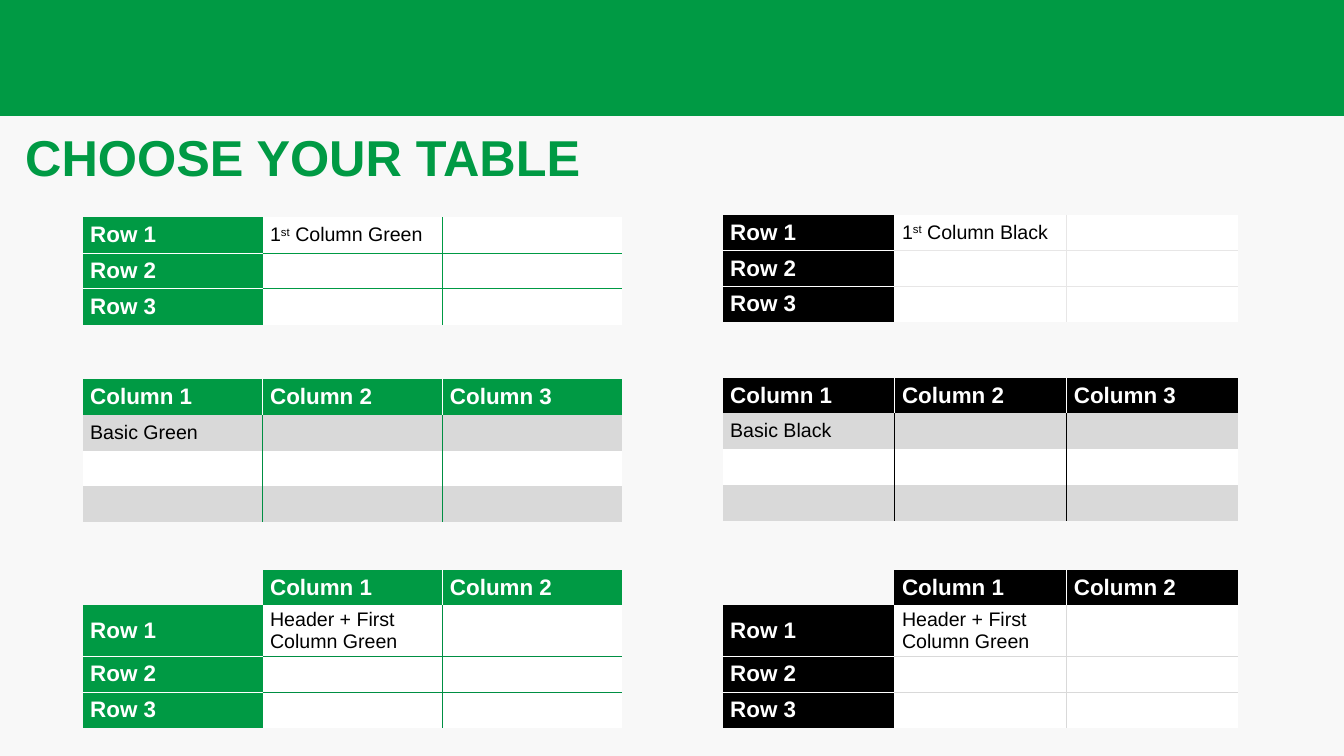
import dataclasses

import lxml.etree
import pptx
import pptx.dml.color
import pptx.enum.shapes
import pptx.enum.text
import pptx.oxml.ns
import pptx.util

PX = 9144  # 100 px to the inch
GREEN, DEEP, BLACK, WHITE = "009A44", "008F43", "000000", "FFFFFF"
PALE, GRAY = "E7E6E6", "D9D9D9"
NO_STYLE = "{2D5ABB26-0587-4C30-8999-92F81FD0307C}"
ROW, TALL = 71, 95
FIRST = [["Row 1"], ["Row 2"], ["Row 3"]]
HEADS = ["Column 1", "Column 2", "Column 3"]


@dataclasses.dataclass
class Grid:
    left: int
    top: int
    col: int
    head: str
    line: str
    rows: list[list[str]]
    top_head: bool = False
    side_head: bool = False
    note: str = ""  # text of the first body cell
    high: tuple[int, ...] = (ROW,) * 4

    @property
    def bands(self) -> bool:
        return self.top_head and not self.side_head

    def kind(self, row: int, col: int) -> str:
        top = self.top_head and row == 0
        side = self.side_head and col == 0
        if top and side:
            return "blank"
        return "head" if top or side else "body"


def px(size: int) -> int:
    return pptx.util.Emu(size * PX)


def color(code: str) -> pptx.dml.color.RGBColor:
    return pptx.dml.color.RGBColor.from_string(code)


def paint(fill, code: str) -> None:
    fill.solid()
    fill.fore_color.rgb = color(code)


def style(font, size: int, code: str, bold: bool) -> None:
    font.name = "Arial"
    font.size = pptx.util.Pt(size)
    font.bold = bold
    font.color.rgb = color(code)


def border(cell, side: str, code: str) -> None:
    """Draw one edge (L, R, T or B); call before the cell is filled."""
    qn = pptx.oxml.ns.qn
    edge = lxml.etree.SubElement(cell._tc.get_or_add_tcPr(), qn(f"a:ln{side}"), w="12700")
    fill = lxml.etree.SubElement(edge, qn("a:solidFill"))
    lxml.etree.SubElement(fill, qn("a:srgbClr"), val=code)


def edges(cell, grid: Grid, row: int, col: int) -> None:
    """Rule inner edges: white between headers, line colour in the body."""
    kind = grid.kind(row, col)
    near = {"L": (row, col - 1), "R": (row, col + 1),
            "T": (row - 1, col), "B": (row + 1, col)}
    for side, (r, c) in near.items():
        inside = 0 <= r < len(grid.rows) and 0 <= c < 3
        flat = grid.bands and side in "TB"
        if inside and not flat and kind == grid.kind(r, c):
            border(cell, side, WHITE if kind == "head" else grid.line)


def write(cell, text: str, head: bool) -> None:
    cell.vertical_anchor = pptx.enum.text.MSO_ANCHOR.MIDDLE
    cell.margin_left = cell.margin_right = px(15)
    cell.margin_top = cell.margin_bottom = px(7)
    para = cell.text_frame.paragraphs[0]
    if text.startswith("1st"):
        for part in ("1", "st", text[3:]):
            para.add_run().text = part
        para.runs[1].font._element.set("baseline", "30000")
    else:
        para.text = text
    for run in para.runs:
        style(run.font, 32 if head else 28, WHITE if head else BLACK, head)


def draw(slide, grid: Grid) -> None:
    count = len(grid.rows)
    high = grid.high[:count]
    frame = slide.shapes.add_table(count, 3, px(grid.left), px(grid.top),
                                   px(grid.col * 3), px(sum(high)))
    table = frame.table
    table.first_row = table.horz_banding = False
    table._tbl.tblPr.find(pptx.oxml.ns.qn("a:tableStyleId")).text = NO_STYLE
    for col in table.columns:
        col.width = px(grid.col)
    spot = (int(grid.top_head), int(grid.side_head))
    for r, texts in enumerate(grid.rows):
        table.rows[r].height = px(high[r])
        for c in range(3):
            cell, kind = table.cell(r, c), grid.kind(r, c)
            text = texts[c] if c < len(texts) else ""
            write(cell, grid.note if (r, c) == spot else text, kind == "head")
            edges(cell, grid, r, c)
            if kind == "blank":
                cell.fill.background()
            elif kind == "head":
                paint(cell.fill, grid.head)
            else:
                paint(cell.fill, GRAY if grid.bands and r % 2 else WHITE)


def banner(slide, width: int) -> None:
    bar = slide.shapes.add_shape(pptx.enum.shapes.MSO_SHAPE.RECTANGLE,
                                 0, 0, px(width), px(230))
    bar.shadow.inherit = False
    paint(bar.fill, GREEN)
    bar.line.fill.background()


def head_line(slide, text: str) -> None:
    title = slide.shapes.title
    title.left, title.top, title.width, title.height = map(px, (50, 259, 2567, 119))
    frame = title.text_frame
    frame.text = text
    frame.auto_size = pptx.enum.text.MSO_AUTO_SIZE.NONE
    frame.vertical_anchor = pptx.enum.text.MSO_ANCHOR.MIDDLE
    frame.margin_left = frame.margin_right = 0
    para = frame.paragraphs[0]
    para.alignment = pptx.enum.text.PP_ALIGN.LEFT
    para.line_spacing = 0.9
    style(para.runs[0].font, 72, GREEN, True)


def main() -> None:
    deck = pptx.Presentation()
    deck.slide_width, deck.slide_height = px(2667), px(1500)
    slide = deck.slides.add_slide(deck.slide_layouts[5])
    paint(slide.background.fill, "F8F8F8")
    banner(slide, 2667)
    head_line(slide, "CHOOSE YOUR TABLE")

    basic = [HEADS, [], [], []]
    both = [["", *HEADS[:2]], *FIRST]
    steps = (ROW, TALL, ROW, ROW)
    mixed = "Header + First Column Green"
    green, black = (357, GREEN), (341, BLACK)
    grids = [
        Grid(164, 431, *green, GREEN, FIRST, side_head=True, note="1st Column Green"),
        Grid(1434, 426, *black, PALE, FIRST, side_head=True, note="1st Column Black"),
        Grid(164, 752, *green, DEEP, basic, top_head=True, note="Basic Green"),
        Grid(1434, 749, *black, BLACK, basic, top_head=True, note="Basic Black"),
        Grid(164, 1130, *green, DEEP, both, True, True, mixed, steps),
        Grid(1434, 1130, *black, GRAY, both, True, True, mixed, steps),
    ]
    for grid in grids:
        draw(slide, grid)
    deck.save("out.pptx")


if __name__ == "__main__":
    main()
